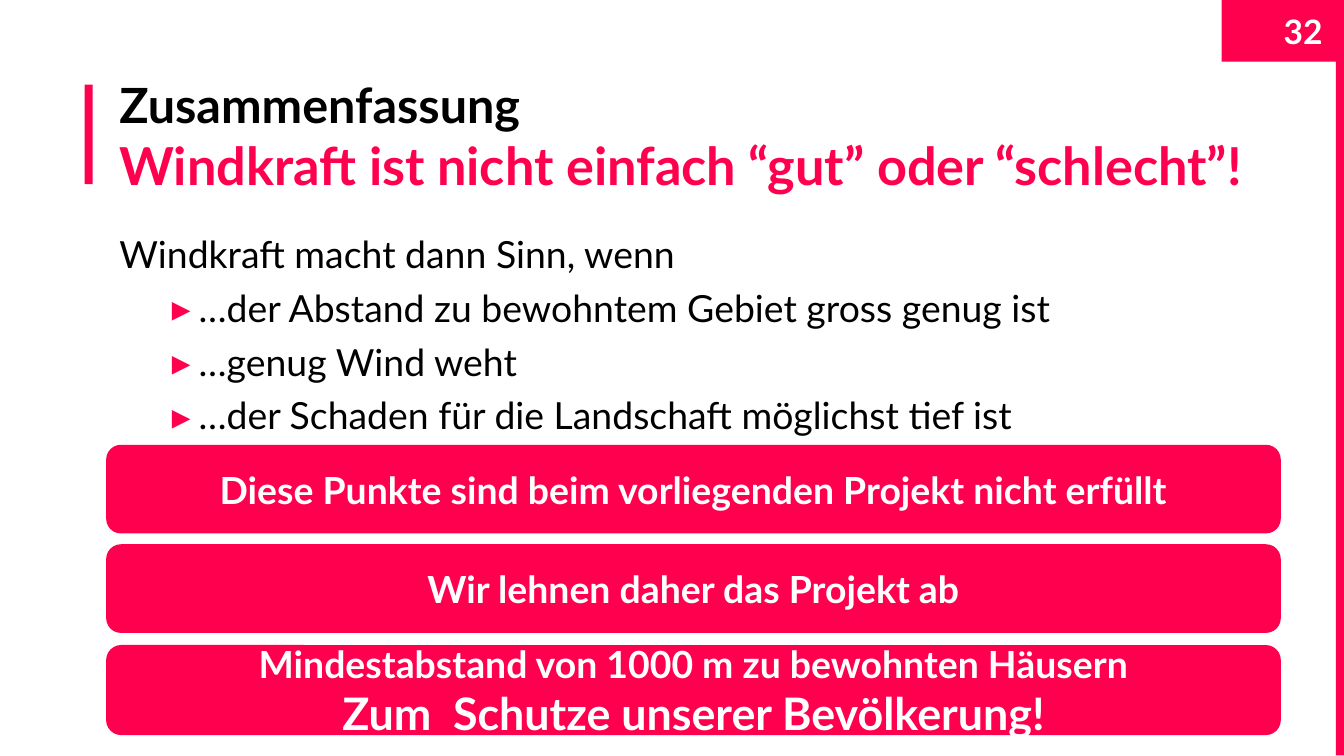
"""Build the closing slide of a talk on wind power."""
import dataclasses

import lxml.etree
import pptx
import pptx.dml.color
import pptx.enum.shapes
import pptx.enum.text
import pptx.oxml.ns
import pptx.util

Inches = pptx.util.Inches
Pt = pptx.util.Pt
Align = pptx.enum.text.PP_ALIGN
Anchor = pptx.enum.text.MSO_ANCHOR
Kind = pptx.enum.shapes.MSO_SHAPE


@dataclasses.dataclass(frozen=True)
class Theme:
    font: str = "Lato"
    pink: str = "FF004E"
    black: str = "000000"
    white: str = "FFFFFF"
    body: int = 20
    head: int = 26
    claim: int = 28
    shout: int = 24
    page: int = 18


class Deck:
    def __init__(self, theme):
        self.theme = theme
        self.file = pptx.Presentation()
        self.file.slide_width = Inches(10)
        self.file.slide_height = Inches(10 * 9 / 16)
        self.slide = self.file.slides.add_slide(self.file.slide_layouts[6])

    def run(self, para, text, size, color, bold=False):
        run = para.add_run()
        run.text = text
        run.font.name = self.theme.font
        run.font.size = Pt(size)
        run.font.bold = bold
        run.font.color.rgb = pptx.dml.color.RGBColor.from_string(color)

    def block(self, kind, left, top, width, height):
        shape = self.slide.shapes.add_shape(
            kind, Inches(left), Inches(top), Inches(width), Inches(height))
        shape.shadow.inherit = False
        shape.fill.solid()
        shape.fill.fore_color.rgb = pptx.dml.color.RGBColor.from_string(self.theme.pink)
        shape.line.fill.background()
        return shape

    def pill(self, top, height, lines):
        frame = self.block(Kind.ROUNDED_RECTANGLE, 0.79, top, 8.74, height).text_frame
        frame.word_wrap = True
        frame.vertical_anchor = Anchor.MIDDLE
        for num, (text, size) in enumerate(lines):
            para = frame.add_paragraph() if num else frame.paragraphs[0]
            para.alignment = Align.CENTER
            self.run(para, text, size, self.theme.white, True)

    def box(self, left, top, width, height, inset=0.1):
        frame = self.slide.shapes.add_textbox(
            Inches(left), Inches(top), Inches(width), Inches(height)).text_frame
        frame.word_wrap = True
        frame.margin_left = frame.margin_right = Inches(0.1)
        frame.margin_top = frame.margin_bottom = Inches(inset)
        return frame

    def title(self, head, claim):
        para = self.box(0.79, 0.46, 8.74, 0.94).paragraphs[0]
        self.run(para, head, self.theme.head, self.theme.black, True)
        para.add_line_break()
        self.run(para, claim, self.theme.claim, self.theme.pink, True)

    def bullet(self, para):
        props = para._p.get_or_add_pPr()
        props.set("marL", str(Inches(0.59)))
        props.set("indent", str(Inches(-0.2)))
        name = pptx.oxml.ns.qn
        color = lxml.etree.SubElement(props, name("a:buClr"))
        lxml.etree.SubElement(color, name("a:srgbClr"), val=self.theme.pink)
        lxml.etree.SubElement(props, name("a:buFont"), typeface=self.theme.font)
        lxml.etree.SubElement(props, name("a:buChar"), char="▸")

    def list(self, lead, items):
        frame = self.box(0.79, 1.62, 8.74, 3.55)
        para = frame.paragraphs[0]
        para.space_before = Pt(6)
        self.run(para, lead, self.theme.body, self.theme.black)
        for item in items:
            para = frame.add_paragraph()
            para.level = 1
            para.space_before = Pt(4.8)
            self.bullet(para)
            self.run(para, item, self.theme.body, self.theme.black)

    def page(self, text):
        frame = self.box(9.2, 0.08, 0.74, 0.3, 0.05)
        frame.vertical_anchor = Anchor.MIDDLE
        para = frame.paragraphs[0]
        para.alignment = Align.RIGHT
        self.run(para, text, self.theme.page, self.theme.white, True)


def main():
    theme = Theme()
    deck = Deck(theme)
    for rect in ((0.63, 0.63, 0.06, 0.74), (9.94, 0, 0.06, 5.62), (9.09, 0, 0.86, 0.46)):
        deck.block(Kind.RECTANGLE, *rect)
    deck.title("Zusammenfassung", "Windkraft ist nicht einfach “gut” oder “schlecht”!")
    deck.list("Windkraft macht dann Sinn, wenn", (
        "…der Abstand zu bewohntem Gebiet gross genug ist",
        "…genug Wind weht",
        "…der Schaden für die Landschaft möglichst tief ist",
    ))
    deck.page("32")
    deck.pill(3.31, 0.66, [
        ("Diese Punkte sind beim vorliegenden Projekt nicht erfüllt", theme.body)])
    deck.pill(4.05, 0.66, [("Wir lehnen daher das Projekt ab", theme.body)])
    deck.pill(4.8, 0.67, [
        ("Mindestabstand von 1000 m zu bewohnten Häusern", theme.body),
        ("Zum  Schutze unserer Bevölkerung!", theme.shout)])
    deck.file.save("out.pptx")


if __name__ == "__main__":
    main()
